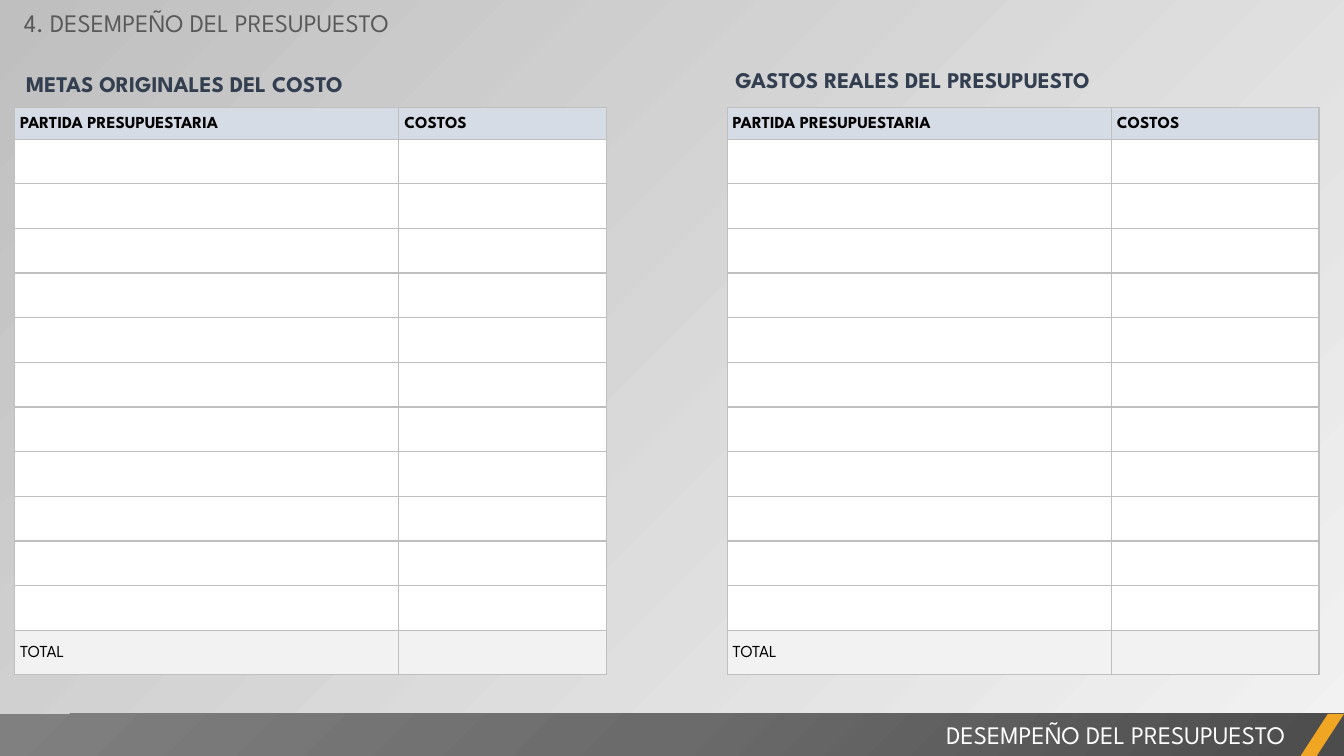
import dataclasses

import pptx
import pptx.dml.color
import pptx.enum.shapes
import pptx.enum.text
import pptx.oxml
import pptx.oxml.ns
import pptx.util

Pt = pptx.util.Pt
ALIGN = pptx.enum.text.PP_ALIGN
SHAPE = pptx.enum.shapes.MSO_SHAPE


@dataclasses.dataclass(frozen=True)
class Theme:
    font: str = "League Spartan"
    title_size: float = 18
    heading_size: float = 16
    cell_size: float = 12
    title: str = "595959"
    heading: str = "333F50"
    text: str = "000000"
    white: str = "FFFFFF"
    header_fill: str = "D6DCE5"
    total_fill: str = "F2F2F2"
    border: str = "BFBFBF"
    accent: str = "F0A622"
    background: tuple = ("F2F2F2", "BFBFBF")
    footer: tuple = ((0, "4C4C4C"), (50, "6B6B6B"), (100, "808080"))


def rgb(color):
    return pptx.dml.color.RGBColor.from_string(color)


class SlideBuilder:
    def __init__(self, slide, theme):
        self.slide = slide
        self.theme = theme

    def background(self):
        fill = self.slide.background.fill
        fill.gradient()
        fill.gradient_angle = 135
        for stop, color in zip(fill.gradient_stops, self.theme.background):
            stop.color.rgb = rgb(color)

    def run(self, paragraph, text, size, color, bold=False):
        run = paragraph.add_run()
        run.text = text
        run.font.name = self.theme.font
        run.font.size = Pt(size)
        run.font.bold = bold
        run.font.color.rgb = rgb(color)

    def text(self, box, text, size, color, bold=False, align=ALIGN.LEFT):
        frame = self.slide.shapes.add_textbox(*map(Pt, box)).text_frame
        frame.word_wrap = True
        frame.auto_size = pptx.enum.text.MSO_AUTO_SIZE.SHAPE_TO_FIT_TEXT
        paragraph = frame.paragraphs[0]
        paragraph.alignment = align
        self.run(paragraph, text, size, color, bold)
        return frame

    def heading(self, box, text):
        frame = self.text(box, text, self.theme.heading_size, self.theme.heading, True)
        frame.margin_left = frame.margin_right = Pt(8.64)
        frame.margin_top = frame.margin_bottom = Pt(4.32)
        frame.paragraphs[0].line_spacing = Pt(21.5)
        frame.paragraphs[0].space_before = Pt(3.2)

    def shape(self, kind, box):
        shape = self.slide.shapes.add_shape(kind, *map(Pt, box))
        shape.shadow.inherit = False
        shape.line.fill.background()
        return shape

    def footer_bar(self, box):
        bar = self.shape(SHAPE.RECTANGLE, box)
        stops = "".join(
            f'<a:gs pos="{position * 1000}"><a:srgbClr val="{color}"/></a:gs>'
            for position, color in self.theme.footer
        )
        gradient = pptx.oxml.parse_xml(
            f'<a:gradFill {pptx.oxml.ns.nsdecls("a")} rotWithShape="1">'
            f'<a:gsLst>{stops}</a:gsLst><a:path path="circle">'
            '<a:fillToRect l="100000" t="100000"/></a:path></a:gradFill>'
        )
        bar.element.spPr.find(pptx.oxml.ns.qn("a:prstGeom")).addnext(gradient)

    def footer_accent(self, box):
        accent = self.shape(SHAPE.PARALLELOGRAM, box)
        accent.adjustments[0] = 0.65
        accent.fill.solid()
        accent.fill.fore_color.rgb = rgb(self.theme.accent)

    def cell(self, cell, fill, text="", bold=False):
        properties = cell._tc.get_or_add_tcPr()
        for side in "LRTB":
            properties.append(pptx.oxml.parse_xml(
                f'<a:ln{side} {pptx.oxml.ns.nsdecls("a")} w="{Pt(1)}"><a:solidFill>'
                f'<a:srgbClr val="{self.theme.border}"/></a:solidFill></a:ln{side}>'
            ))
        cell.fill.solid()
        cell.fill.fore_color.rgb = rgb(fill)
        if text:
            cell.vertical_anchor = pptx.enum.text.MSO_ANCHOR.MIDDLE
            cell.margin_left = cell.margin_right = Pt(4)
            cell.margin_top = cell.margin_bottom = 0
            paragraph = cell.text_frame.paragraphs[0]
            paragraph.line_spacing = 1.07
            self.run(paragraph, text, self.theme.cell_size, self.theme.text, bold)

    def budget_table(self, left, top, widths, heights, headers, total):
        table = self.slide.shapes.add_table(
            len(heights), len(widths), Pt(left), Pt(top), Pt(sum(widths)), Pt(sum(heights))
        ).table
        table.first_row = table.horz_banding = False
        for column, width in zip(table.columns, widths):
            column.width = Pt(width)
        for row, height in zip(table.rows, heights):
            row.height = Pt(height)
        last = len(heights) - 1
        for index, header in enumerate(headers):
            self.cell(table.cell(0, index), self.theme.header_fill, header, True)
            for row in range(1, last):
                self.cell(table.cell(row, index), self.theme.white)
            self.cell(table.cell(last, index), self.theme.total_fill, "" if index else total)


def main():
    presentation = pptx.Presentation()
    presentation.slide_width = Pt(960)
    presentation.slide_height = Pt(540)
    theme = Theme()
    builder = SlideBuilder(presentation.slides.add_slide(presentation.slide_layouts[6]), theme)
    builder.background()

    builder.heading((10, 43.4, 402, 28.8), "METAS ORIGINALES DEL COSTO")
    builder.heading((516.6, 40.8, 402, 28.8), "GASTOS REALES DEL PRESUPUESTO")
    for left in (10.4, 519.4):
        builder.budget_table(
            left, 77, (274.4, 148.4), (22.4,) + (31.9,) * 12,
            ("PARTIDA PRESUPUESTARIA", "COSTOS"), "TOTAL",
        )

    builder.text((10, 2, 382, 29), "4. DESEMPEÑO DEL PRESUPUESTO", theme.title_size, theme.title)
    builder.footer_bar((0, 510, 960, 30))
    builder.text((378, 510, 547, 29), "DESEMPEÑO DEL PRESUPUESTO",
                 theme.title_size, theme.white, align=ALIGN.RIGHT)
    builder.footer_accent((929, 510, 31, 30))
    presentation.save("out.pptx")


if __name__ == "__main__":
    main()
